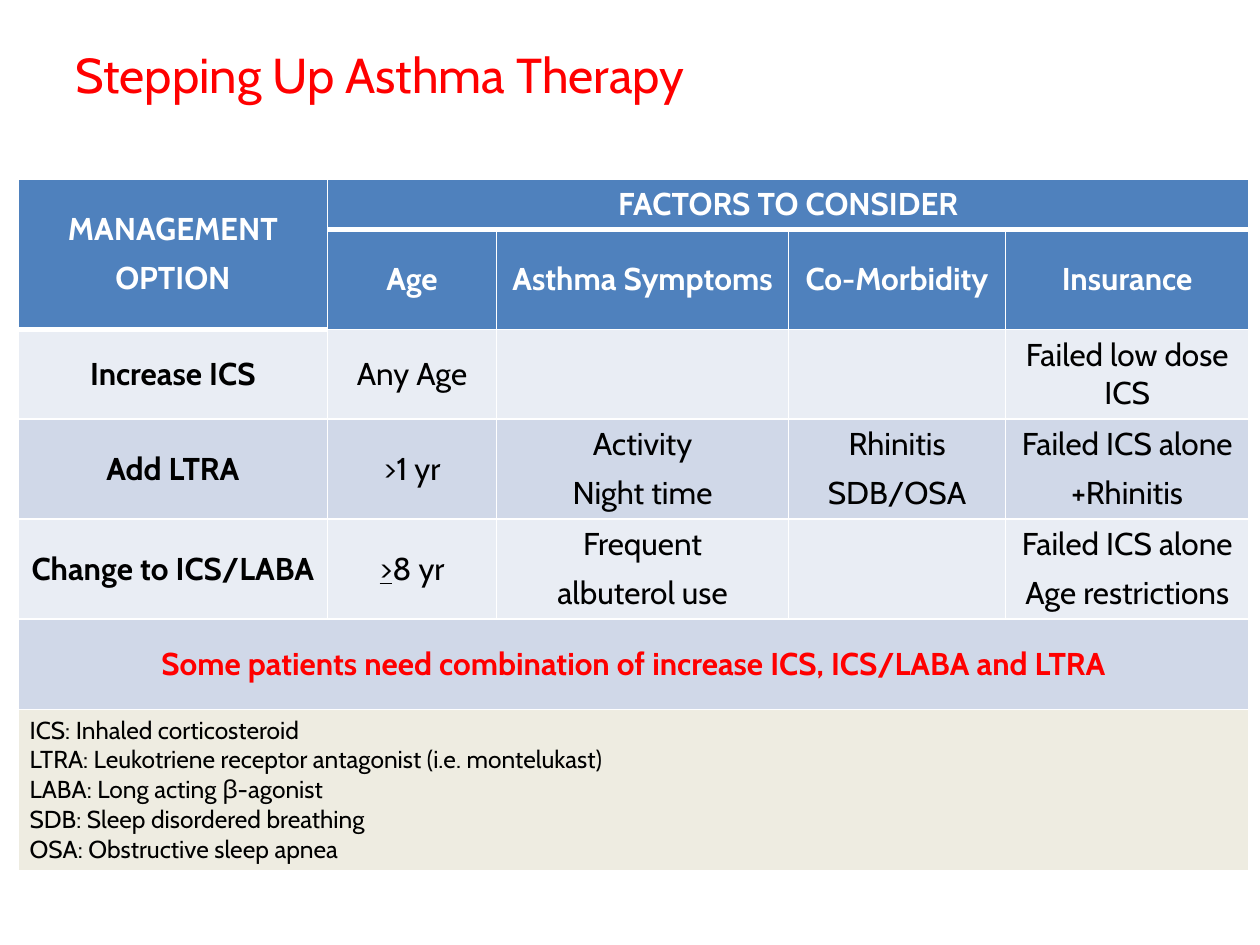
"""Builds the slide on stepping up asthma therapy."""
import pptx
import pptx.util
import pptx.dml.color
import pptx.enum.text
import pptx.oxml
import pptx.oxml.ns

Pt = pptx.util.Pt
ALIGN = pptx.enum.text.PP_ALIGN
ANCHOR = pptx.enum.text.MSO_ANCHOR


def colour(hex_string):
    return pptx.dml.color.RGBColor.from_string(hex_string)


def write(frame, text, size=18, color="000000", bold=False, align=ALIGN.CENTER,
          before=0, after=6, underlined=""):
    for index, line in enumerate(text.split("\n")):
        paragraph = frame.add_paragraph() if index else frame.paragraphs[0]
        paragraph.alignment = align
        paragraph.space_before = Pt(before)
        paragraph.space_after = Pt(after)
        for part in filter(None, (underlined, line.removeprefix(underlined))):
            run = paragraph.add_run()
            run.text = part
            run.font.name = "Cabin"
            run.font.size = Pt(size)
            run.font.bold = bold
            run.font.color.rgb = colour(color)
            if underlined:
                run.font.underline = part == underlined


deck = pptx.Presentation()
deck.slide_width, deck.slide_height = Pt(720), Pt(540)
slide = deck.slides.add_slide(deck.slide_layouts[5])

title = slide.shapes.title
title.left, title.top, title.width, title.height = Pt(36), Pt(21.6), Pt(648), Pt(90)
title.text_frame.vertical_anchor = ANCHOR.TOP
write(title.text_frame, "Stepping Up Asthma Therapy", size=28, color="FF0000",
      align=ALIGN.LEFT, after=0)

legend = "\n".join([
    "ICS: Inhaled corticosteroid",
    "LTRA: Leukotriene receptor antagonist (i.e. montelukast)",
    "LABA: Long acting β-agonist",
    "SDB: Sleep disordered breathing",
    "OSA: Obstructive sleep apnea",
])
rows = [
    ["MANAGEMENT\nOPTION", "FACTORS TO CONSIDER", "", "", ""],
    ["", "Age", "Asthma Symptoms", "Co-Morbidity", "Insurance"],
    ["Increase ICS", "Any Age", "", "", "Failed low dose ICS"],
    ["Add LTRA", ">1 yr", "Activity\nNight time", "Rhinitis\nSDB/OSA",
     "Failed ICS alone\n+Rhinitis"],
    ["Change to ICS/LABA", ">8 yr", "Frequent\nalbuterol use", "",
     "Failed ICS alone\nAge restrictions"],
    ["Some patients need combination of increase ICS, ICS/LABA and LTRA", "", "", "", ""],
    [legend, "", "", "", ""],
]
row_fills = ["4F81BD", "4F81BD", "E9EDF4", "D0D8E8", "E9EDF4", "D0D8E8", "EEECE1"]
row_heights = [29, 57, 51.2, 57.2, 57.2, 51.6, 92.2]
column_widths = [176.8, 96.5, 167, 123.9, 139.1]

options = slide.shapes.add_table(len(rows), len(column_widths), Pt(10.4), Pt(102.2),
                                 Pt(sum(column_widths)), Pt(sum(row_heights))).table
for column, width in zip(options.columns, column_widths):
    column.width = Pt(width)
for row, height in zip(options.rows, row_heights):
    row.height = Pt(height)
for first, last in [((0, 0), (1, 0)), ((0, 1), (0, 4)), ((5, 0), (5, 4)), ((6, 0), (6, 4))]:
    options.cell(*first).merge(options.cell(*last))

namespace = pptx.oxml.ns.nsdecls("a")
for r, texts in enumerate(rows):
    for c, text in enumerate(texts):
        cell = options.cell(r, c)
        cell.vertical_anchor = ANCHOR.MIDDLE
        cell.margin_left = cell.margin_right = Pt(6.5)
        cell.margin_top = cell.margin_bottom = Pt(3.2)
        thick_bottom = r == 0 or (r, c) == (1, 0)
        for side in "LRTB":
            thick = (side == "B" and thick_bottom) or (side == "T" and r == 1 and c > 0)
            cell._tc.get_or_add_tcPr().append(pptx.oxml.parse_xml(
                f'<a:ln{side} {namespace} w="{Pt(3 if thick else 1)}"><a:solidFill>'
                f'<a:srgbClr val="FFFFFF"/></a:solidFill></a:ln{side}>'))
        cell.fill.solid()
        cell.fill.fore_color.rgb = colour(row_fills[r])
        if not text:
            continue
        if r < 2:
            style = dict(color="FFFFFF", bold=True, after=12 if (r, c) == (0, 1) else 6)
        elif r == 5:
            style = dict(color="FF0000", bold=True)
        elif r == 6:
            style = dict(size=14, align=ALIGN.LEFT, after=0)
        else:
            style = dict(bold=c == 0, underlined=">" if text == ">8 yr" else "")
        write(cell.text_frame, text, **style)

deck.save("out.pptx")
